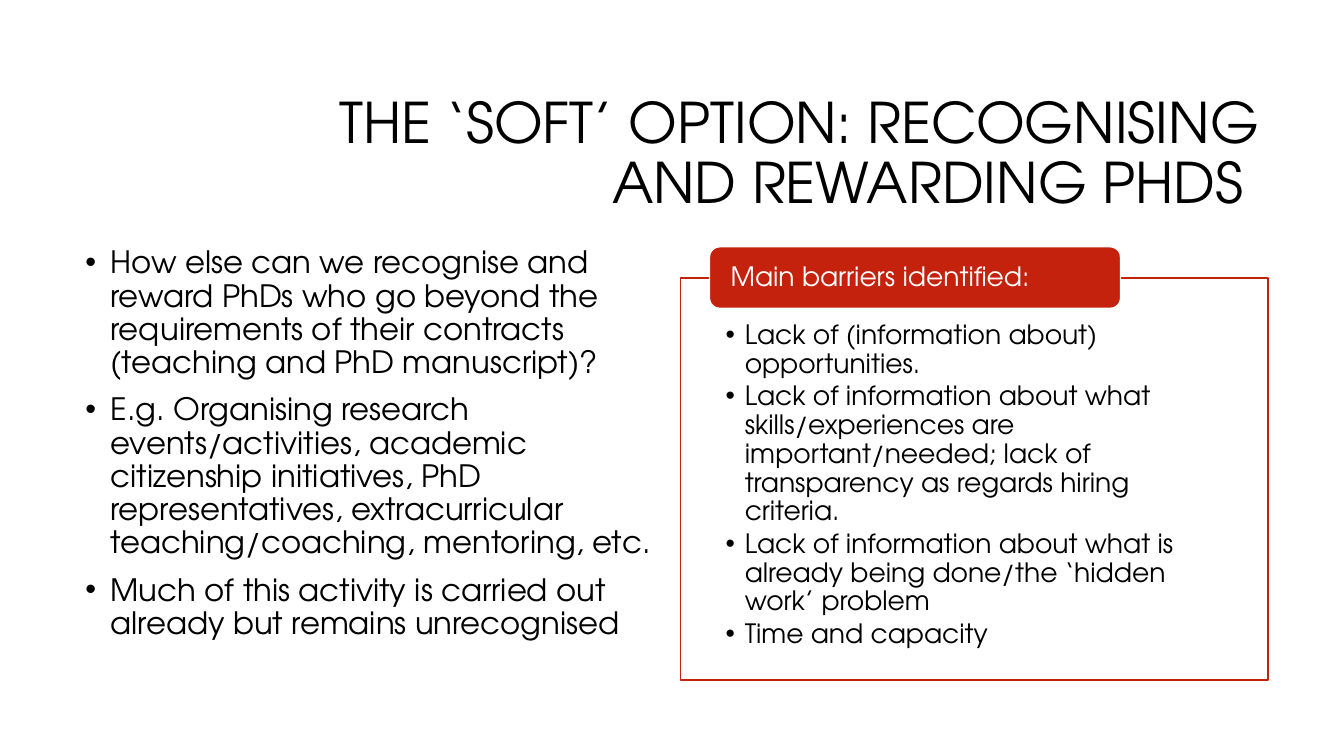
from dataclasses import dataclass

import pptx
import pptx.dml.color
import pptx.enum.shapes
import pptx.enum.text
import pptx.oxml.ns
import pptx.slide
import pptx.text.text
import pptx.util
from lxml import etree

Cm = pptx.util.Cm
Pt = pptx.util.Pt
RGB = pptx.dml.color.RGBColor
Shape = pptx.enum.shapes.MSO_SHAPE
Align = pptx.enum.text.PP_ALIGN
Anchor = pptx.enum.text.MSO_ANCHOR
qn = pptx.oxml.ns.qn


@dataclass(frozen=True)
class Theme:
    font: str = "TeX Gyre Adventor"
    black: RGB = RGB(0, 0, 0)
    white: RGB = RGB(255, 255, 255)
    red: RGB = RGB(0xC4, 0x22, 0x0D)
    title_size: float = 40
    body_size: float = 22
    panel_size: float = 19
    line_spacing: float = 0.9


THEME = Theme()


@dataclass(frozen=True)
class TextStyle:
    size: float
    color: RGB = THEME.black
    align: Align = Align.LEFT
    anchor: Anchor = Anchor.TOP
    insets: tuple[float, float, float, float] = (0.25, 0.13, 0.25, 0.13)
    indent: float = 0
    before: float = 0
    after: float = 0


@dataclass(frozen=True)
class Block:
    box: tuple[float, float, float, float]
    style: TextStyle
    paragraphs: tuple[str, ...]
    shape: Shape | None = None
    fill: RGB = THEME.white
    line: RGB = THEME.red
    opacity: int = 100


BLOCKS = (
    Block(
        (8.05, 2.13, 23.93, 3.58),
        TextStyle(THEME.title_size, align=Align.RIGHT, anchor=Anchor.MIDDLE),
        ("THE ‘SOFT’ OPTION: RECOGNISING AND REWARDING PHDS ",),
    ),
    Block(
        (1.9, 6.1, 14.81, 11.18),
        TextStyle(THEME.body_size, indent=0.64, before=10),
        (
            "How else can we recognise and reward PhDs who go beyond the "
            "requirements of their contracts (teaching and PhD manuscript)?",
            "E.g. Organising research events/activities, academic citizenship "
            "initiatives, PhD representatives, extracurricular "
            "teaching/coaching, mentoring, etc.",
            "Much of this activity is carried out already but remains unrecognised",
        ),
    ),
    Block(
        (17.15, 7.01, 14.81, 10.13),
        TextStyle(THEME.panel_size, insets=(1.14, 1.09, 1.14, 0.38),
                  indent=0.48, after=2.85),
        (
            "Lack of (information about) opportunities.",
            "Lack of information about what skills/experiences are "
            "important/needed; lack of transparency as regards hiring criteria.",
            "Lack of information about what is already being done/the "
            "‘hidden work’ problem",
            "Time and capacity",
        ),
        shape=Shape.RECTANGLE,
        opacity=90,
    ),
    Block(
        (17.88, 6.22, 10.36, 1.55),
        TextStyle(THEME.panel_size, THEME.white, anchor=Anchor.MIDDLE,
                  insets=(0.46, 0, 0.46, 0)),
        ("Main barriers identified:",),
        shape=Shape.ROUNDED_RECTANGLE,
        fill=THEME.red,
        line=THEME.white,
    ),
)


def add_bullet(p: pptx.text.text._Paragraph, indent: float) -> None:
    pPr = p._p.get_or_add_pPr()
    pPr.set("marL", str(Cm(indent)))
    pPr.set("indent", str(-Cm(indent)))
    etree.SubElement(pPr, qn("a:buFont"), typeface="Arial")
    etree.SubElement(pPr, qn("a:buChar"), char="•")


def write_text(tf: pptx.text.text.TextFrame, block: Block) -> None:
    style = block.style
    tf.word_wrap = True
    tf.vertical_anchor = style.anchor
    tf.margin_left, tf.margin_top, tf.margin_right, tf.margin_bottom = map(
        Cm, style.insets)
    for i, text in enumerate(block.paragraphs):
        p = tf.add_paragraph() if i else tf.paragraphs[0]
        if style.indent:
            add_bullet(p, style.indent)
        p.alignment = style.align
        p.line_spacing = THEME.line_spacing
        p.space_before = Pt(style.before if i else 0)
        p.space_after = Pt(style.after)
        r = p.add_run()
        r.text = text
        r.font.name = THEME.font
        r.font.size = Pt(style.size)
        r.font.color.rgb = style.color


def add_block(s: pptx.slide.Slide, block: Block) -> None:
    box = tuple(map(Cm, block.box))
    if block.shape is None:
        sp = s.shapes.add_textbox(*box)
    else:
        sp = s.shapes.add_shape(block.shape, *box)
        sp.shadow.inherit = False
        sp.fill.solid()
        sp.fill.fore_color.rgb = block.fill
        sp.line.color.rgb = block.line
        sp.line.width = Pt(1)
        if block.opacity < 100:
            color = sp._element.spPr.find(qn("a:solidFill")).find(qn("a:srgbClr"))
            etree.SubElement(color, qn("a:alpha"), val=str(block.opacity * 1000))
    write_text(sp.text_frame, block)


def main() -> None:
    prs = pptx.Presentation()
    prs.slide_width, prs.slide_height = Cm(33.87), Cm(19.05)
    s = prs.slides.add_slide(prs.slide_layouts[6])
    for block in BLOCKS:
        add_block(s, block)
    prs.save("out.pptx")


if __name__ == "__main__":
    main()
